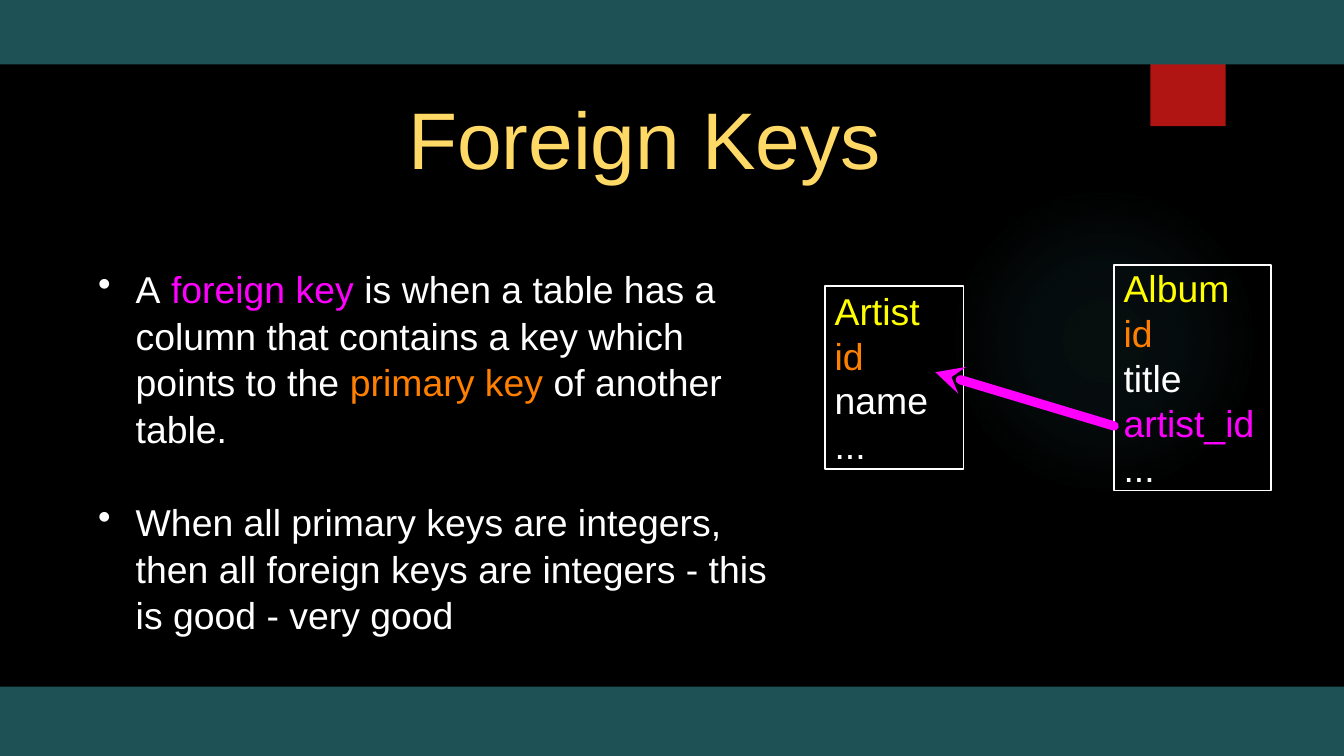
from lxml import etree
from pptx import Presentation
from pptx.dml.color import RGBColor
from pptx.enum.shapes import MSO_CONNECTOR, MSO_SHAPE
from pptx.enum.text import MSO_ANCHOR, PP_ALIGN
from pptx.oxml import parse_xml
from pptx.oxml.ns import nsdecls, qn
from pptx.util import Inches, Pt

WHITE, YELLOW, ORANGE, MAGENTA = "FFFFFF", "FFFF00", "FF7F00", "FF00FF"
GOLD, TEAL, RED, GLOW = "FFD966", "1E5155", "B01513", "50B9C1"


def color(hex_string):
    return RGBColor.from_string(hex_string)


def set_frame(frame, inset_x, inset_y):
    frame.word_wrap = True
    frame.vertical_anchor = MSO_ANCHOR.MIDDLE
    frame.margin_left = frame.margin_right = Inches(inset_x)
    frame.margin_top = frame.margin_bottom = Inches(inset_y)


def set_font(paragraph, size, hex_string):
    paragraph.font.name = "Arial"
    paragraph.font.size = Pt(size)
    paragraph.font.color.rgb = color(hex_string)


def add_plain_shape(slide, kind, box, fill=None):
    """Add a shape with no shadow and no line, filled only if a colour is given."""
    shape = slide.shapes.add_shape(kind, *map(Inches, box))
    shape.shadow.inherit = False
    shape.line.fill.background()
    if fill:
        shape.fill.solid()
        shape.fill.fore_color.rgb = color(fill)
    else:
        shape.fill.background()
    return shape


def add_glow(slide, box):
    ellipse = add_plain_shape(slide, MSO_SHAPE.OVAL, box)
    stops = "".join(
        f'<a:gs pos="{position * 1000}"><a:srgbClr val="{GLOW}">'
        f'<a:alpha val="{alpha * 1000}"/></a:srgbClr></a:gs>'
        for position, alpha in ((0, 7), (36, 6), (69, 0)))
    gradient = parse_xml(
        f'<a:gradFill {nsdecls("a")}><a:gsLst>{stops}</a:gsLst><a:path path="circle">'
        '<a:fillToRect l="50000" t="50000" r="50000" b="50000"/></a:path></a:gradFill>')
    properties = ellipse.fill._xPr
    properties.replace(properties.find(qn("a:noFill")), gradient)


def add_decoration(slide, width, height):
    add_glow(slide, (7.06, 1.38, 2.31, 2.31))
    add_plain_shape(slide, MSO_SHAPE.RECTANGLE, (8.56, 0, 0.56, 0.94), RED)
    for top, bottom in ((0, 0.48), (5.11, height)):
        add_plain_shape(slide, MSO_SHAPE.RECTANGLE, (0, top, width, bottom - top), TEAL)


def set_title(slide, text, box):
    title = slide.shapes.title
    title.left, title.top, title.width, title.height = map(Inches, box)
    set_frame(title.text_frame, 0.02, 0.02)
    title.text_frame.text = text
    paragraph = title.text_frame.paragraphs[0]
    paragraph.alignment = PP_ALIGN.CENTER
    set_font(paragraph, 43, GOLD)


def add_bullet(paragraph):
    properties = paragraph._p.get_or_add_pPr()
    properties.set("marL", str(Inches(0.28)))
    properties.set("indent", str(-Inches(0.28)))
    bullet_color = etree.SubElement(properties, qn("a:buClr"))
    etree.SubElement(bullet_color, qn("a:srgbClr"), val=WHITE)
    etree.SubElement(properties, qn("a:buChar"), char="•")


def add_bullets(slide, box, bullets):
    frame = slide.shapes.add_textbox(*map(Inches, box)).text_frame
    set_frame(frame, 0.02, 0.02)
    for index, runs in enumerate(bullets):
        paragraph = frame.add_paragraph() if index else frame.paragraphs[0]
        add_bullet(paragraph)
        paragraph.line_spacing = 1.04
        if index:
            paragraph.space_before = Pt(25)
        set_font(paragraph, 20, WHITE)
        for text, hex_string in runs:
            run = paragraph.add_run()
            run.text = text
            run.font.color.rgb = color(hex_string)


def add_entity(slide, box, rows):
    """Draw a database table as an outlined box of column names."""
    entity = add_plain_shape(slide, MSO_SHAPE.RECTANGLE, box)
    entity.line.color.rgb = color(WHITE)
    entity.line.width = Pt(1)
    frame = entity.text_frame
    set_frame(frame, 0.07, 0)
    for index, (text, hex_string) in enumerate(rows):
        paragraph = frame.add_paragraph() if index else frame.paragraphs[0]
        paragraph.text = text
        paragraph.alignment = PP_ALIGN.LEFT
        paragraph.line_spacing = Pt(24)
        set_font(paragraph, 20, hex_string)


def add_reference_arrow(slide, head, tail):
    arrow = slide.shapes.add_connector(MSO_CONNECTOR.STRAIGHT, *map(Inches, head + tail))
    arrow.line.color.rgb = color(MAGENTA)
    arrow.line.width = Pt(5)
    line = arrow.line._get_or_add_ln()
    line.set("cap", "rnd")
    etree.SubElement(line, qn("a:headEnd"), type="stealth")
    etree.SubElement(arrow._element.spPr, qn("a:effectLst"))


def main():
    width = 10
    height = width * 9 / 16
    presentation = Presentation()
    presentation.slide_width, presentation.slide_height = Inches(width), Inches(height)
    slide = presentation.slides.add_slide(presentation.slide_layouts[5])
    slide.background.fill.solid()
    slide.background.fill.fore_color.rgb = color("000000")

    add_decoration(slide, width, height)
    set_title(slide, "Foreign Keys", (0.71, 0.48, 8.17, 1.08))
    add_bullets(slide, (0.71, 1.6, 5.18, 3.51), [
        [("A", WHITE), (" foreign key", MAGENTA),
         (" is when a table has a column that contains a key which points to the ", WHITE),
         ("primary key", ORANGE), (" of another table.", WHITE)],
        [("When all primary keys are integers, then all foreign keys are integers"
          " - this is good - very good", WHITE)],
    ])
    add_entity(slide, (6.14, 2.13, 1.03, 1.36), [
        ("Artist", YELLOW), ("id", ORANGE), ("name", WHITE), ("...", WHITE)])
    add_entity(slide, (8.29, 1.97, 1.17, 1.68), [
        ("Album", YELLOW), ("id", ORANGE), ("title", WHITE),
        ("artist_id", MAGENTA), ("...", WHITE)])
    add_reference_arrow(slide, (6.96, 2.77), (8.29, 3.17))
    presentation.save("out.pptx")


if __name__ == "__main__":
    main()
